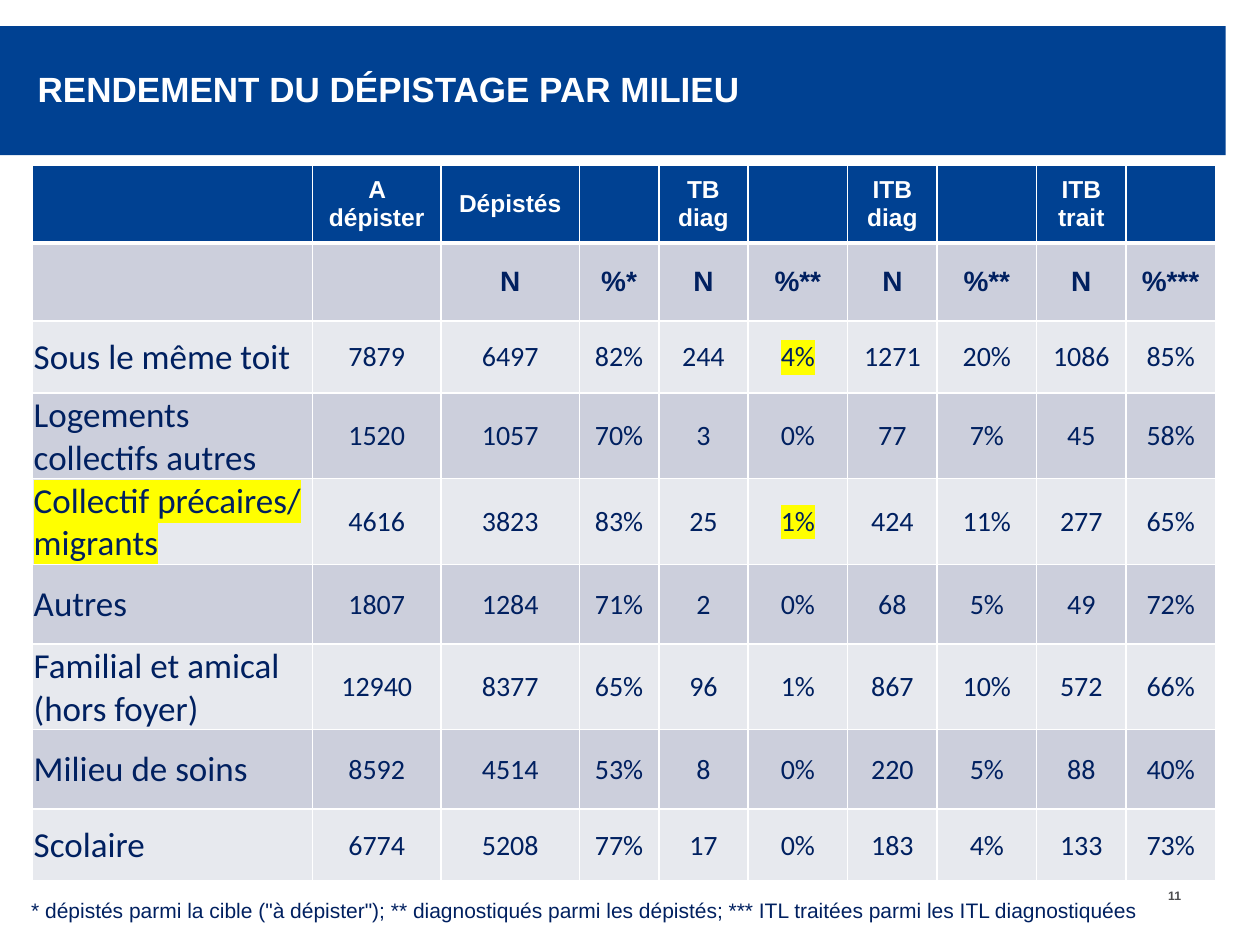
import pptx
import pptx.dml.color
import pptx.enum.shapes
import pptx.enum.text
import pptx.oxml
import pptx.oxml.ns
import pptx.util
from pptx.util import Cm

COLORS = {"blue": "004192", "navy": "002060", "white": "FFFFFF", "grey": "4D4D4F",
          "dark_band": "CCCFDC", "light_band": "E7E9EE", "marker": "FFFF00"}
ALIGN = pptx.enum.text.PP_ALIGN
MIDDLE = pptx.enum.text.MSO_ANCHOR.MIDDLE

COL_WIDTHS = [5.64, 2.59, 2.79, 1.6, 1.8, 2.01, 1.8, 2.01, 1.8, 1.8]
ROW_HEIGHTS = [1.57, 1.57, 1.45, 1.73, 1.73, 1.6, 1.73, 1.6, 1.45]
HEADERS = [
    ["", "A dépister", "Dépistés", "", "TB diag", "", "ITB diag", "", "ITB trait", ""],
    ["", "", "N", "%*", "N", "%**", "N", "%**", "N", "%***"],
]
RESULTS = {
    "Sous le même toit": "7879 6497 82% 244 4% 1271 20% 1086 85%",
    "Logements collectifs autres": "1520 1057 70% 3 0% 77 7% 45 58%",
    "Collectif précaires/ migrants": "4616 3823 83% 25 1% 424 11% 277 65%",
    "Autres": "1807 1284 71% 2 0% 68 5% 49 72%",
    "Familial et amical (hors foyer)": "12940 8377 65% 96 1% 867 10% 572 66%",
    "Milieu de soins": "8592 4514 53% 8 0% 220 5% 88 40%",
    "Scolaire": "6774 5208 77% 17 0% 183 4% 133 73%",
}
HIGHLIGHTED = {(2, 5), (4, 0), (4, 5)}


class Deck:
    """Holds the style and the current slide, and draws each kind of element."""

    def __init__(self, prs):
        self.s = prs.slides.add_slide(prs.slide_layouts[6])

    def color(self, name):
        return pptx.dml.color.RGBColor.from_string(COLORS[name])

    def paragraph(self, p, text, size, color, font="Arial", bold=False, align=ALIGN.LEFT):
        p.alignment = align
        p.font.size = pptx.util.Pt(size)
        p.font.name = font
        p.font.bold = bold
        p.font.color.rgb = self.color(color)
        if text:
            p.add_run().text = text

    def band(self, x, y, w, h, color):
        sp = self.s.shapes.add_shape(
            pptx.enum.shapes.MSO_SHAPE.RECTANGLE, Cm(x), Cm(y), Cm(w), Cm(h))
        sp.shadow.inherit = False
        sp.fill.solid()
        sp.fill.fore_color.rgb = self.color(color)
        sp.line.fill.background()

    def text(self, x, y, w, h, text, size, color, inset=(0.1, 0), anchor=None, **style):
        tf = self.s.shapes.add_textbox(Cm(x), Cm(y), Cm(w), Cm(h)).text_frame
        tf.word_wrap = True
        tf.margin_left = tf.margin_right = Cm(inset[0])
        tf.margin_top = tf.margin_bottom = Cm(inset[1])
        tf.vertical_anchor = anchor
        self.paragraph(tf.paragraphs[0], text, size, color, **style)

    def highlight(self, r):
        ns = pptx.oxml.ns.nsdecls("a")
        r.font._element.append(pptx.oxml.parse_xml(
            f'<a:highlight {ns}><a:srgbClr val="{COLORS["marker"]}"/></a:highlight>'))

    def borders(self, cell, top=1, bottom=1):
        ns = pptx.oxml.ns.nsdecls("a")
        for side, width in (("L", 1), ("R", 1), ("T", top), ("B", bottom)):
            cell._tc.get_or_add_tcPr().append(pptx.oxml.parse_xml(
                f'<a:ln{side} {ns} w="{pptx.util.Pt(width)}"><a:solidFill>'
                f'<a:srgbClr val="{COLORS["white"]}"/></a:solidFill></a:ln{side}>'))

    def cell(self, cell, row, col, text):
        self.borders(cell, 3 if row == 1 else 1, 3 if row == 0 else 1)
        cell.fill.solid()
        band = "blue" if row == 0 else "dark_band" if row % 2 else "light_band"
        cell.fill.fore_color.rgb = self.color(band)
        cell.vertical_anchor = MIDDLE
        p = cell.text_frame.paragraphs[0]
        if row < 2:
            size, color = ((14, "white"), (16, "navy"))[row]
            self.paragraph(p, text, size, color, bold=True, align=ALIGN.CENTER)
            return
        cell.margin_left = cell.margin_right = cell.margin_top = Cm(0.02)
        cell.margin_bottom = 0
        size, align = (16, ALIGN.CENTER) if col else (20, ALIGN.LEFT)
        self.paragraph(p, text, size, "navy", "Calibri", align=align)
        if (row, col) in HIGHLIGHTED:
            self.highlight(p.runs[0])

    def table(self, x, y, widths, heights, rows):
        table = self.s.shapes.add_table(
            len(heights), len(widths), Cm(x), Cm(y),
            Cm(sum(widths)), Cm(sum(heights))).table
        for column, width in zip(table.columns, widths):
            column.width = Cm(width)
        for i, (height, values) in enumerate(zip(heights, rows)):
            table.rows[i].height = Cm(height)
            for j, value in enumerate(values):
                self.cell(table.cell(i, j), i, j, value)


def main():
    prs = pptx.Presentation()
    prs.slide_width, prs.slide_height = Cm(25.4), Cm(19.05)
    deck = Deck(prs)
    deck.band(0, 0.53, 24.71, 2.6, "blue")
    deck.text(23.22, 17.91, 0.69, 0.33, "11", 7, "grey", bold=True, align=ALIGN.RIGHT)
    deck.text(0.66, 0.91, 21.84, 1.75, "RENDEMENT DU DÉPISTAGE PAR MILIEU", 20, "white",
              anchor=MIDDLE, bold=True)
    rows = HEADERS + [[place, *values.split()] for place, values in RESULTS.items()]
    deck.table(0.66, 3.33, COL_WIDTHS, ROW_HEIGHTS, rows)
    deck.text(0.38, 17.96, 23.11, 0.76,
              '* dépistés parmi la cible ("à dépister"); ** diagnostiqués parmi les '
              "dépistés; *** ITL traitées parmi les ITL diagnostiquées",
              12, "navy", inset=(0.25, 0.13))
    prs.save("out.pptx")


if __name__ == "__main__":
    main()
